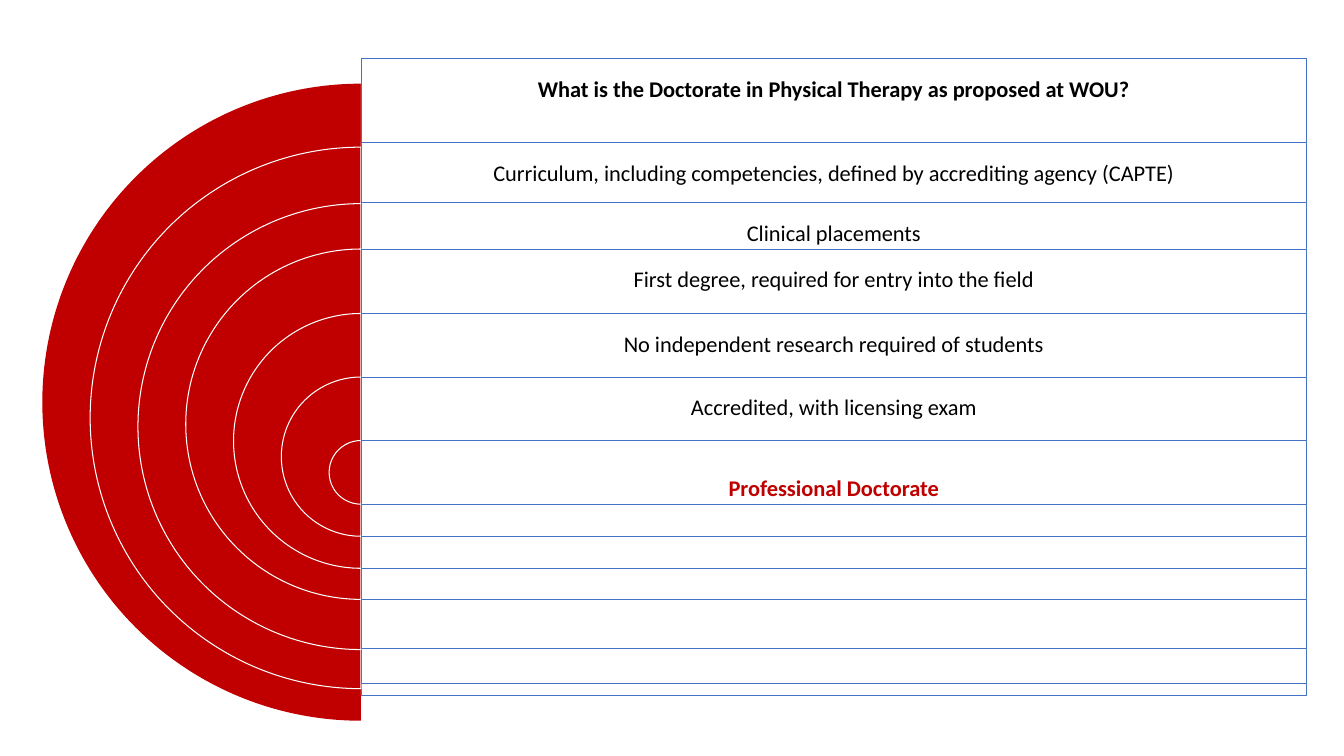
from dataclasses import dataclass

from lxml.etree import SubElement
from pptx import Presentation
from pptx.dml.color import RGBColor
from pptx.enum.shapes import MSO_SHAPE
from pptx.enum.text import MSO_ANCHOR, MSO_AUTO_SIZE, PP_ALIGN
from pptx.oxml.ns import qn
from pptx.shapes.autoshape import Shape
from pptx.slide import Slide
from pptx.util import Inches, Pt

RED, WHITE, BLUE, BLACK = "C00000", "FFFFFF", "4472C4", "000000"
CENTER_X = 3.58
PANEL_WIDTH = 9.38
LABEL_HEIGHT = 0.63
OUTER_DIAMETER = 6.32
DIAMETER_STEP = 0.948
INSET = 0.07


@dataclass
class Ring:
    text: str
    pie_top: float
    panel_top: float
    color: str = BLACK
    bold: bool = False


RINGS = [
    Ring("What is the Doctorate in Physical Therapy as proposed at WOU?", 0.83, 0.58, bold=True),
    Ring("Curriculum, including competencies, defined by accrediting agency (CAPTE)", 1.46, 1.41),
    Ring("Clinical placements", 2.02, 2.01),
    Ring("First degree, required for entry into the field", 2.47, 2.47),
    Ring("No independent research required of students", 3.11, 3.11),
    Ring("Accredited, with licensing exam", 3.74, 3.74),
    Ring("Professional Doctorate", 4.37, 4.37, RED, True),
]


def rgb(color: str) -> RGBColor:
    return RGBColor.from_string(color)


def set_format(target: object, values: dict) -> None:
    for name, value in values.items():
        setattr(target, name, value)


def set_outline(shape: Shape, color: str, width: float) -> None:
    shape.line.color.rgb = rgb(color)
    shape.line.width = Pt(width)


def add_pie(page: Slide, ring: Ring, diameter: float, outlined: bool) -> None:
    pie = page.shapes.add_shape(
        MSO_SHAPE.PIE, Inches(CENTER_X - diameter / 2), Inches(ring.pie_top),
        Inches(diameter), Inches(diameter))
    pie.shadow.inherit = False
    # Left half: from 90 to 270 degrees
    pie.adjustments[0], pie.adjustments[1] = 54, 162
    pie.fill.solid()
    pie.fill.fore_color.rgb = rgb(RED)
    if outlined:
        set_outline(pie, WHITE, 0.75)
    else:
        pie.line.fill.background()


def add_panel(page: Slide, ring: Ring, height: float, filled: bool) -> None:
    panel = page.shapes.add_shape(
        MSO_SHAPE.RECTANGLE, Inches(CENTER_X), Inches(ring.panel_top),
        Inches(PANEL_WIDTH), Inches(height))
    panel.shadow.inherit = False
    set_outline(panel, BLUE, 0.5)
    if filled:
        panel.fill.solid()
        panel.fill.fore_color.rgb = rgb(WHITE)
        fill_color = panel.element.spPr.find(qn("a:solidFill")).find(qn("a:srgbClr"))
        SubElement(fill_color, qn("a:alpha"), val="90000")
    else:
        panel.fill.background()


def write_label(box: Shape, ring: Ring, at_bottom: bool) -> None:
    set_format(box, {
        "left": Inches(CENTER_X), "top": Inches(ring.panel_top),
        "width": Inches(PANEL_WIDTH), "height": Inches(LABEL_HEIGHT),
    })
    frame = box.text_frame
    set_format(frame, {
        "word_wrap": True,
        "auto_size": MSO_AUTO_SIZE.NONE,
        "vertical_anchor": MSO_ANCHOR.BOTTOM if at_bottom else MSO_ANCHOR.MIDDLE,
        "margin_left": Inches(INSET), "margin_right": Inches(INSET),
        "margin_top": Inches(INSET),
        "margin_bottom": Inches(0.03 if at_bottom else INSET),
    })
    para = frame.paragraphs[0]
    set_format(para, {"alignment": PP_ALIGN.CENTER, "line_spacing": 0.9})
    span = para.add_run()
    span.text = ring.text
    set_format(span.font, {"name": "Calibri", "size": Pt(16), "bold": ring.bold})
    span.font.color.rgb = rgb(ring.color)


def main() -> None:
    deck = Presentation()
    deck.slide_width, deck.slide_height = Inches(13.33), Inches(7.5)
    page = deck.slides.add_slide(deck.slide_layouts[5])
    title = page.shapes.title

    # Nested half circles, each with its panel and label
    for index, ring in enumerate(RINGS):
        first, last = index == 0, index == len(RINGS) - 1
        diameter = OUTER_DIAMETER - index * DIAMETER_STEP
        add_pie(page, ring, diameter, outlined=not first)
        add_panel(page, ring, diameter, filled=not last)
        if first:
            # The title sits in front of the outermost panel
            title.element.getparent().append(title.element)
            label = title
        else:
            label = page.shapes.add_textbox(0, 0, 0, 0)
        write_label(label, ring, at_bottom=last)

    deck.save("out.pptx")


if __name__ == "__main__":
    main()
